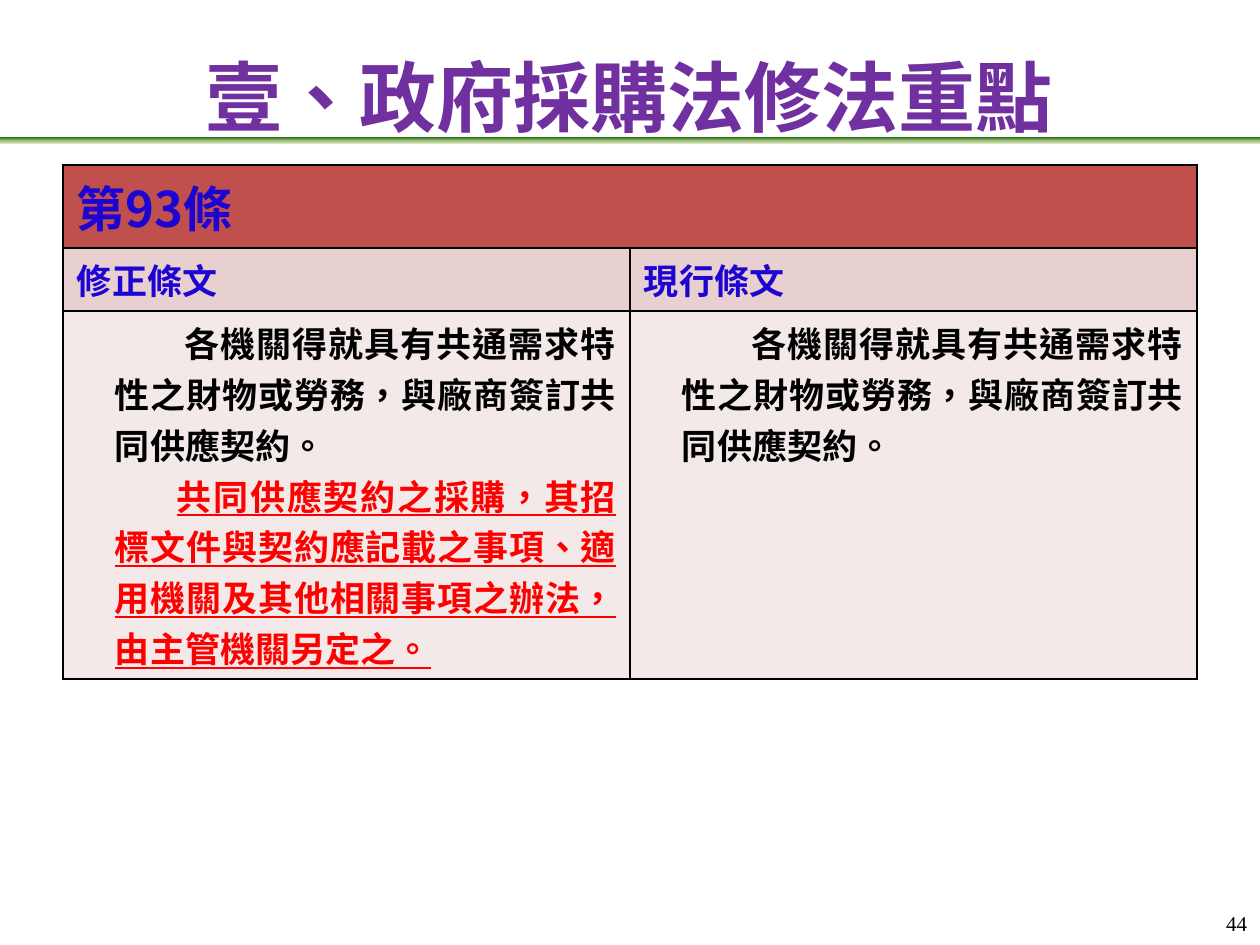
from copy import deepcopy

from lxml.etree import SubElement
from pptx import Presentation
from pptx.dml.color import RGBColor
from pptx.enum.shapes import MSO_SHAPE
from pptx.enum.text import MSO_ANCHOR, PP_ALIGN
from pptx.oxml.ns import qn
from pptx.util import Emu, Pt

SANS = "Noto Sans CJK SC"
SERIF = "Times New Roman"
BLUE, RED, BLACK = "1D04D2", "FF0000", "000000"
RULE = "各機關得就具有共通需求特性之財物或勞務，與廠商簽訂共同供應契約。"
ADDED = "共同供應契約之採購，其招標文件與契約應記載之事項、適用機關及其他相關事項之辦法，由主管機關另定之。"


def px(num):
    return Emu(round(num * 914400 / 126))


def rgb(code):
    return RGBColor.from_string(code)


class Page:
    def __init__(self, slide, font):
        self.slide = slide
        self.font = font

    def style(self, para, size, color, bold=True, font=None, under=False):
        for run in para.runs:
            face = run.font
            face.size, face.bold = Pt(size), bold
            face.color.rgb = rgb(color)
            face.name = font or self.font
            if under:
                face.underline = True
            props = run._r.get_or_add_rPr()
            props.set("lang", "zh-TW")
            east = SubElement(props, qn("a:ea"))
            east.set("typeface", font or self.font)

    def text(self, box, words, pad, anchor, align, **look):
        frame = self.slide.shapes.add_textbox(*map(px, box)).text_frame
        frame.word_wrap = True
        frame.vertical_anchor = anchor
        frame.margin_left = frame.margin_right = px(pad[0])
        frame.margin_top = frame.margin_bottom = px(pad[1])
        para = frame.paragraphs[0]
        para.text, para.alignment = words, align
        self.style(para, **look)

    def band(self, box, colors):
        bar = self.slide.shapes.add_shape(MSO_SHAPE.RECTANGLE, *map(px, box))
        bar.shadow.inherit = False
        bar.line.fill.background()
        bar.fill.gradient()
        bar.fill.gradient_angle = 270
        first = bar.fill.gradient_stops[0]._gs
        first.addnext(deepcopy(first))
        for i, (stop, color) in enumerate(zip(bar.fill.gradient_stops, colors)):
            stop.position = i / (len(colors) - 1)
            stop.color.rgb = rgb(color)

    def table(self, left, top, cols, rows):
        shape = self.slide.shapes.add_table(
            len(rows), len(cols), px(left), px(top), px(sum(cols)), px(sum(rows)))
        grid = shape.table
        grid.first_row = grid.horz_banding = False
        for col, wide in zip(grid.columns, cols):
            col.width = px(wide)
        for row, high in zip(grid.rows, rows):
            row.height = px(high)
        return grid

    def cell(self, cell, fill):
        cell.margin_left = cell.margin_right = px(14)
        cell.margin_top = cell.margin_bottom = px(6)
        props = cell._tc.get_or_add_tcPr()
        for side in ("lnL", "lnR", "lnT", "lnB"):
            line = SubElement(props, qn("a:" + side), w=str(Pt(1)))
            paint = SubElement(line, qn("a:solidFill"))
            SubElement(paint, qn("a:srgbClr"), val=BLACK)
        cell.fill.solid()
        cell.fill.fore_color.rgb = rgb(fill)

    def head(self, cell, words, size):
        cell.text_frame.text = words
        self.style(cell.text_frame.paragraphs[0], size, BLUE)

    def body(self, cell, parts):
        frame = cell.text_frame
        for i, (words, indent, color, under) in enumerate(parts):
            para = frame.add_paragraph() if i else frame.paragraphs[0]
            para.text, para.alignment = words, PP_ALIGN.JUSTIFY
            props = para._p.get_or_add_pPr()
            props.set("marL", str(px(38)))
            props.set("indent", str(px(indent)))
            self.style(para, 20, color, under=under)


def main():
    deck = Presentation()
    deck.slide_width, deck.slide_height = px(1260), px(945)
    page = Page(deck.slides.add_slide(deck.slide_layouts[6]), SANS)

    # Title and the band under it
    page.band((0, 137, 1260, 7), ("156B13", "9CB86E", "DDEBCF"))
    page.text((54, 37, 1150, 118), "壹、政府採購法修法重點", (13, 6),
              MSO_ANCHOR.MIDDLE, PP_ALIGN.CENTER, size=44, color="7030A0")

    # Table of amended and current articles
    grid = page.table(63, 165, (567, 567), (83, 63, 368))
    for row, fill in zip(grid.rows, ("C0504D", "E8D0D0", "F4E9E9")):
        for cell in row.cells:
            page.cell(cell, fill)
    grid.cell(0, 0).merge(grid.cell(0, 1))
    page.head(grid.cell(0, 0), "第93條", 28)
    page.head(grid.cell(1, 0), "修正條文", 20)
    page.head(grid.cell(1, 1), "現行條文", 20)
    rule = (RULE, 70, BLACK, False)
    page.body(grid.cell(2, 0), (rule, (ADDED, 62, RED, True)))
    page.body(grid.cell(2, 1), (rule,))

    # Page number
    page.text((1181, 887, 69, 49), "44", (3, 0), MSO_ANCHOR.BOTTOM,
              PP_ALIGN.RIGHT, size=12, color=BLACK, bold=False, font=SERIF)
    deck.save("out.pptx")


if __name__ == "__main__":
    main()
